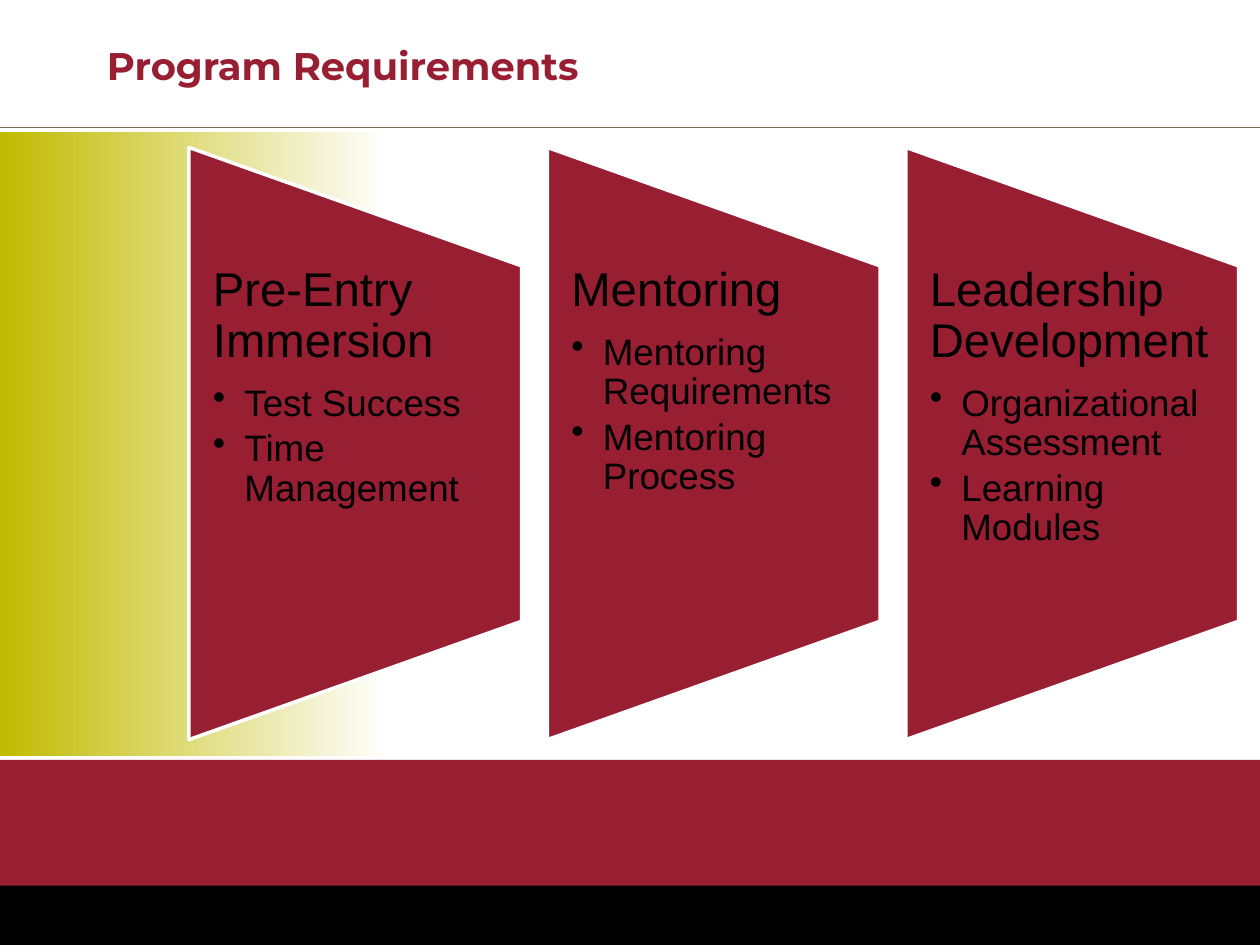
from lxml import etree
from pptx import Presentation
from pptx.dml.color import RGBColor
from pptx.enum.shapes import MSO_CONNECTOR, MSO_SHAPE
from pptx.enum.text import MSO_ANCHOR
from pptx.oxml.ns import qn
from pptx.util import Inches, Pt

RECTANGLE = MSO_SHAPE.RECTANGLE
TRAPEZOID = MSO_SHAPE.FLOWCHART_MANUAL_OPERATION
STRAIGHT = MSO_CONNECTOR.STRAIGHT
TOP, BOTTOM = MSO_ANCHOR.TOP, MSO_ANCHOR.BOTTOM

# Content
TITLE = "Program Requirements"
COLUMNS = [
    ("Pre-Entry Immersion", ["Test Success", "Time Management"]),
    ("Mentoring", ["Mentoring Requirements", "Mentoring Process"]),
    ("Leadership Development", ["Organizational Assessment", "Learning Modules"]),
]

THEME = {
    "crimson": "981E32", "olive": "C1BB00", "brown": "7C6A55",
    "black": "000000", "white": "FFFFFF",
    "title_font": "Montserrat", "body_font": "Arial",
    "title_size": 22, "heading_size": 27, "bullet_size": 21,
}

# Layout in inches
FIRST_LEFT, LAST_LEFT = 1.5, 7.19
PANEL_WIDTH, PANEL_HEIGHT, PANEL_MIDDLE = 2.64, 4.7, 3.52
TEXT_TOP, TEXT_HEIGHT = 2.11, 2.82
BULLET_INDENT = 0.25


def color(name):
    return RGBColor.from_string(THEME[name])


def add_block(page, kind, left, top, width, height, fill, outline=None):
    block = page.shapes.add_shape(
        kind, Inches(left), Inches(top), Inches(width), Inches(height))
    block.shadow.inherit = False
    block.fill.solid()
    block.fill.fore_color.rgb = color(fill)
    if outline:
        block.line.color.rgb = color(outline)
        block.line.width = Pt(2)
    else:
        block.line.fill.background()
    return block


def add_text_box(page, left, top, width, height, anchor, side, edge):
    box = page.shapes.add_textbox(
        Inches(left), Inches(top), Inches(width), Inches(height))
    frame = box.text_frame
    frame.word_wrap = True
    frame.vertical_anchor = anchor
    frame.margin_left = frame.margin_right = Inches(side)
    frame.margin_top = frame.margin_bottom = Inches(edge)
    return frame


def write(para, text, *, size, font="body_font", fill="black", bold=False,
          spacing=0.9, after=0, bullet=False):
    if bullet:
        properties = para._p.get_or_add_pPr()
        properties.set("marL", str(Inches(BULLET_INDENT)))
        properties.set("indent", str(-Inches(BULLET_INDENT)))
        etree.SubElement(properties, qn("a:buChar")).set("char", "•")
    para.line_spacing = spacing
    para.space_after = Pt(after)
    span = para.add_run()
    span.text = text
    span.font.name = THEME[font]
    span.font.size = Pt(THEME[size])
    span.font.bold = bold
    span.font.color.rgb = color(fill)


def add_background(page):
    # Side gradient
    glow = add_block(page, RECTANGLE, 0, 1.05, 3.08, 4.95, "olive")
    glow.fill.gradient()
    glow.fill.gradient_angle = 0
    for stop, name in zip(glow.fill.gradient_stops, ("olive", "white")):
        stop.color.rgb = color(name)

    # Footer bands
    add_block(page, RECTANGLE, 0, 6.03, 10, 1.01, "crimson")
    add_block(page, RECTANGLE, 0, 7.03, 10, 0.47, "black")

    # Rule under the title
    rule = page.shapes.add_connector(
        STRAIGHT, 0, Inches(1.01), Inches(10), Inches(1.01))
    rule.line.color.rgb = color("brown")
    rule.line.width = Pt(0.5)
    etree.SubElement(rule._element.spPr, qn("a:effectLst"))


def add_column(page, left, heading, bullets):
    # The trapezoid is drawn lying down, then turned about its centre
    middle = left + PANEL_WIDTH / 2
    panel = add_block(page, TRAPEZOID, middle - PANEL_HEIGHT / 2,
                      PANEL_MIDDLE - PANEL_WIDTH / 2,
                      PANEL_HEIGHT, PANEL_WIDTH, "crimson", "white")
    panel.rotation = 270

    frame = add_text_box(page, left, TEXT_TOP, PANEL_WIDTH, TEXT_HEIGHT,
                         TOP, 0.19, 0)
    write(frame.paragraphs[0], heading, size="heading_size", after=9.45)
    for bullet in bullets:
        write(frame.add_paragraph(), bullet, size="bullet_size",
              after=3.15, bullet=True)


def main():
    deck = Presentation()
    deck.slide_width, deck.slide_height = Inches(10), Inches(7.5)
    page = deck.slides.add_slide(deck.slide_layouts[6])

    add_background(page)

    # Title
    frame = add_text_box(page, 0.75, 0, 6.44, 0.75, BOTTOM, 0.1, 0.05)
    write(frame.paragraphs[0], TITLE, size="title_size", font="title_font",
          fill="crimson", bold=True, spacing=0.8)

    # Three equally spaced columns
    pitch = (LAST_LEFT - FIRST_LEFT) / (len(COLUMNS) - 1)
    for index, (heading, bullets) in enumerate(COLUMNS):
        add_column(page, FIRST_LEFT + index * pitch, heading, bullets)

    deck.save("out.pptx")


if __name__ == "__main__":
    main()
